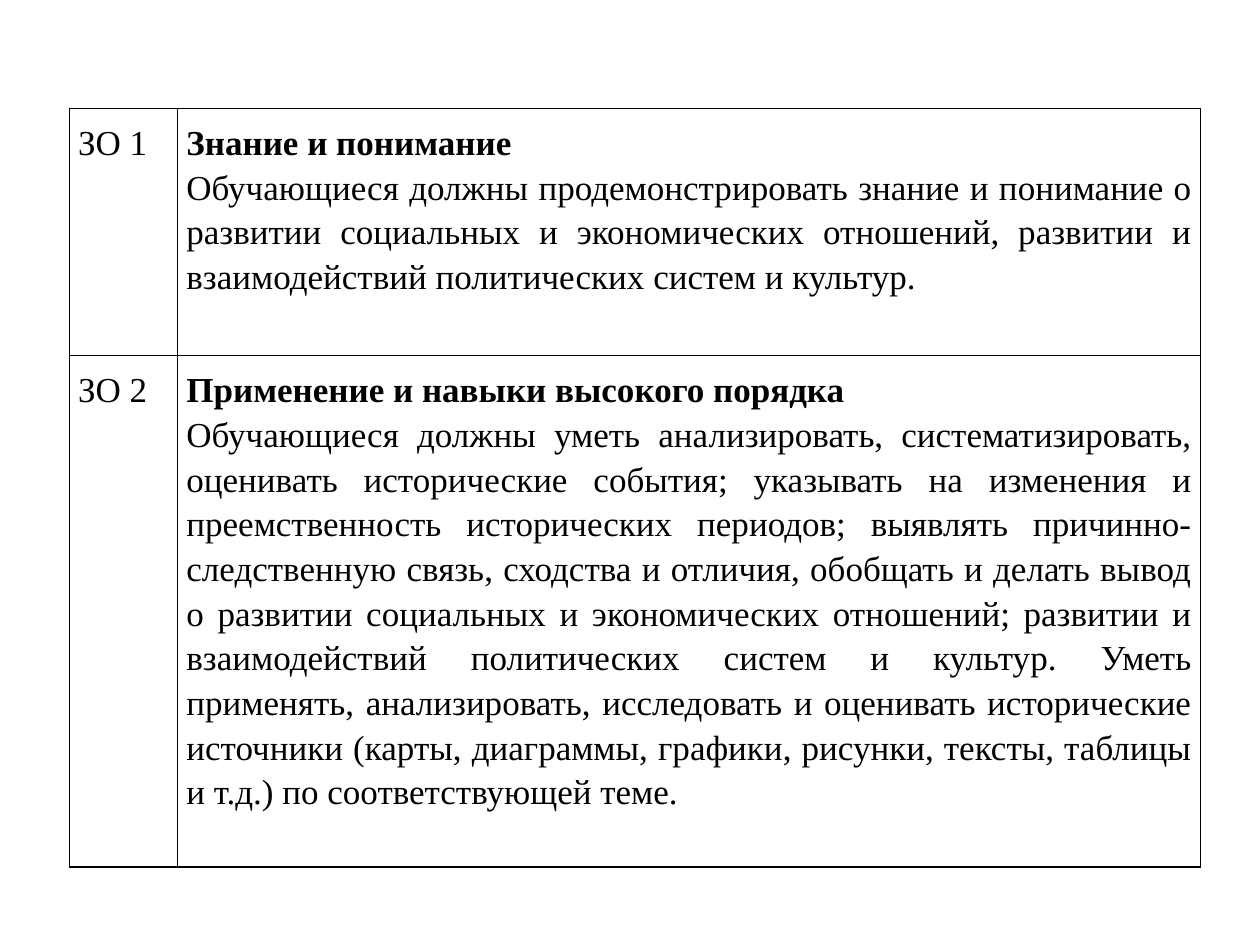
import lxml.etree
import pptx
import pptx.dml.color
import pptx.enum.text
import pptx.oxml.ns
import pptx.util

Inches = pptx.util.Inches
ALIGN = pptx.enum.text.PP_ALIGN
INK = "000000"
COLUMN_SHARES = (0.86, 8.12)
ROW_SHARES = (1.96, 4.05)
CELL_FORMAT = {
    "margin_left": Inches(0.07),
    "margin_right": Inches(0.07),
    "margin_top": Inches(0.08),
    "margin_bottom": Inches(0.08),
    "vertical_anchor": pptx.enum.text.MSO_ANCHOR.TOP,
}
FONT_FORMAT = {"name": "Times New Roman", "size": pptx.util.Pt(20)}
OBJECTIVES = [
    (
        "ЗО 1",
        "Знание и понимание",
        "Обучающиеся должны продемонстрировать знание и понимание о развитии "
        "социальных и экономических отношений, развитии и взаимодействий "
        "политических систем и культур.",
    ),
    (
        "ЗО 2",
        "Применение и навыки высокого порядка",
        "Обучающиеся должны уметь анализировать, систематизировать, оценивать "
        "исторические события; указывать на изменения и преемственность "
        "исторических периодов; выявлять причинно-следственную связь, сходства "
        "и отличия, обобщать и делать вывод о развитии социальных и "
        "экономических отношений; развитии и взаимодействий политических "
        "систем и культур. Уметь применять, анализировать, исследовать и "
        "оценивать исторические источники (карты, диаграммы, графики, рисунки, "
        "тексты, таблицы и т.д.) по соответствующей теме.",
    ),
]


def color(value):
    """Return the colour for a hex string."""
    return pptx.dml.color.RGBColor.from_string(value)


def apply_format(target, values):
    """Set every attribute in values on target."""
    for attribute, value in values.items():
        setattr(target, attribute, value)


def add_element(parent, tag, **attributes):
    """Append a DrawingML element to parent and return it."""
    return lxml.etree.SubElement(parent, pptx.oxml.ns.qn(tag), attributes)


def draw_borders(cell):
    """Give all four sides of a cell a thin solid line."""
    properties = cell._tc.get_or_add_tcPr()
    for side in ("a:lnL", "a:lnR", "a:lnT", "a:lnB"):
        border = add_element(properties, side, w=str(pptx.util.Pt(1)))
        add_element(add_element(border, "a:solidFill"), "a:srgbClr", val=INK)


def write_paragraph(paragraph, wording, bold=False, alignment=ALIGN.LEFT):
    """Write one formatted paragraph with its tab stop."""
    apply_format(paragraph, {"alignment": alignment, "line_spacing": 1.15})
    tabs = add_element(paragraph._p.get_or_add_pPr(), "a:tabLst")
    add_element(tabs, "a:tab", pos=str(Inches(0.3)), algn="l")
    run = paragraph.add_run()
    run.text = wording
    apply_format(run.font, {**FONT_FORMAT, "bold": bold})
    run.font.color.rgb = color(INK)


def fill_objective(code_cell, description_cell, objective):
    """Fill one table row with a code, a heading and a description."""
    code, heading, description = objective
    for cell in (code_cell, description_cell):
        apply_format(cell, CELL_FORMAT)
        draw_borders(cell)
        cell.fill.background()
    write_paragraph(code_cell.text_frame.paragraphs[0], code)
    frame = description_cell.text_frame
    write_paragraph(frame.paragraphs[0], heading, bold=True)
    write_paragraph(frame.add_paragraph(), description, alignment=ALIGN.JUSTIFY)


def add_objectives_table(slide, left, top, width, height):
    """Place the table of assessment objectives in the given box."""
    table = slide.shapes.add_table(
        len(OBJECTIVES), len(COLUMN_SHARES), left, top, width, height
    ).table
    apply_format(table, {"first_row": False, "horz_banding": False})
    for column, share in zip(table.columns, COLUMN_SHARES):
        column.width = int(width * share / sum(COLUMN_SHARES))
    for row, share, objective in zip(table.rows, ROW_SHARES, OBJECTIVES):
        row.height = int(height * share / sum(ROW_SHARES))
        fill_objective(*row.cells, objective)


def main():
    """Build and save the presentation."""
    presentation = pptx.Presentation()
    size = {"slide_width": Inches(10), "slide_height": Inches(7.5)}
    apply_format(presentation, size)
    slide = presentation.slides.add_slide(presentation.slide_layouts[6])
    add_objectives_table(
        slide, Inches(0.55), Inches(0.86), Inches(8.98), Inches(6.02)
    )
    presentation.save("out.pptx")


if __name__ == "__main__":
    main()
